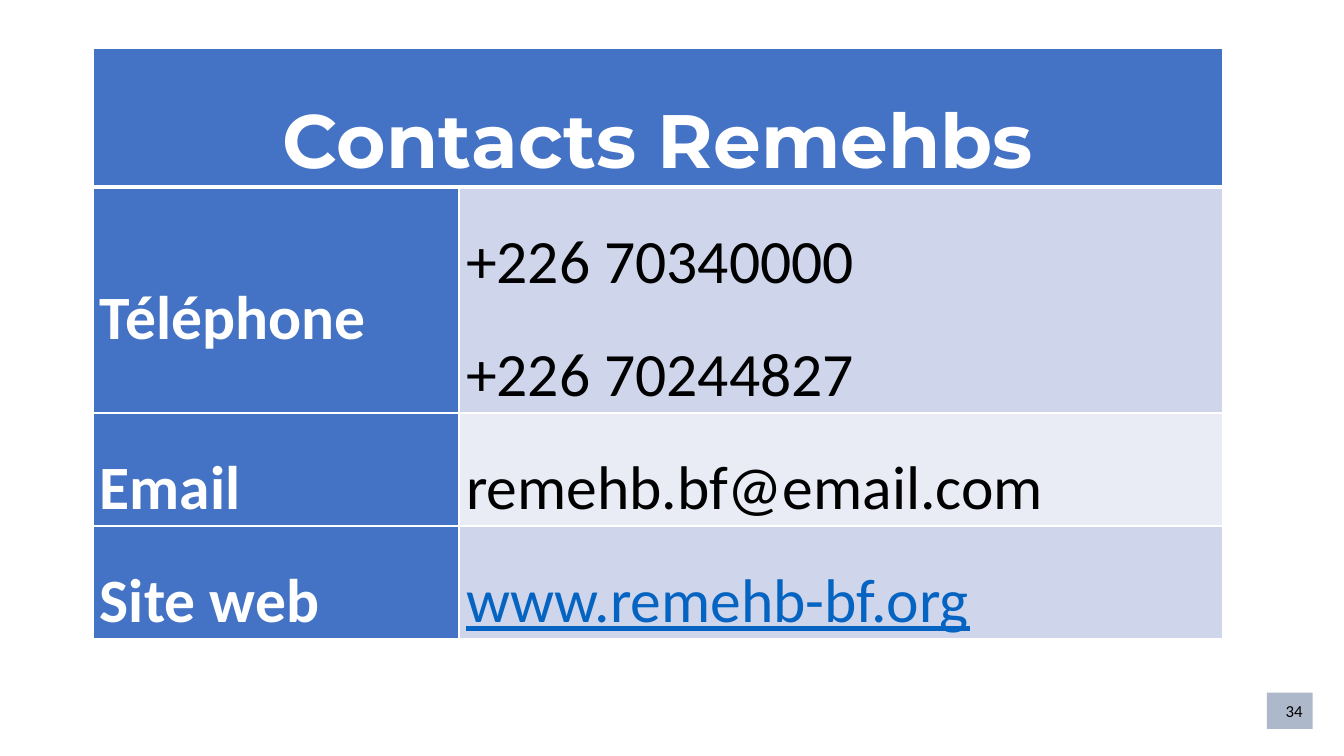
from lxml import etree
from pptx import Presentation
from pptx.dml.color import RGBColor
from pptx.enum.shapes import MSO_SHAPE
from pptx.enum.text import MSO_ANCHOR, PP_ALIGN
from pptx.oxml.ns import qn
from pptx.util import Pt

RECT = MSO_SHAPE.RECTANGLE
MIDDLE = MSO_ANCHOR.MIDDLE
CENTER, RIGHT, JUSTIFY = PP_ALIGN.CENTER, PP_ALIGN.RIGHT, PP_ALIGN.JUSTIFY

COLORS = {
    "white": "FFFFFF", "black": "000000", "blue": "4472C4", "link": "0563C1",
    "dark": "CFD5EA", "light": "E9EBF5", "grey": "ADB9CA",
}

# Label, value, value fill, value colour, row height
ROWS = [
    ("Téléphone", "+226 70340000\n+226 70244827", "dark", "black", 161),
    ("Email", "remehb.bf@email.com", "light", "black", 80.5),
    ("Site web", "www.remehb-bf.org", "dark", "link", 80.5),
]
HEAD = 98.5


def rgb(name):
    return RGBColor.from_string(COLORS[name])


def style(frame, align, font, size, color, bold=False, space=None):
    for para in frame.paragraphs:
        para.alignment = align
        para.line_spacing = space
        for run in para.runs:
            run.font.name = font
            run.font.size = Pt(size)
            run.font.bold = bold
            run.font.underline = True if color == "link" else None
            run.font.color.rgb = rgb(color)


def border(cell, top, bottom):
    props = cell._tc.get_or_add_tcPr()
    for side, width in (("L", 1), ("R", 1), ("T", top), ("B", bottom)):
        line = etree.SubElement(props, qn("a:ln" + side), w=str(Pt(width)))
        fill = etree.SubElement(line, qn("a:solidFill"))
        etree.SubElement(fill, qn("a:srgbClr"), val=COLORS["white"])


def fill_cell(cell, text, fill, align, font, size, color, bold):
    cell.text_frame.text = text
    cell.vertical_anchor = MIDDLE
    cell.margin_left = cell.margin_right = Pt(5)
    cell.margin_top = cell.margin_bottom = 0
    cell.fill.solid()
    cell.fill.fore_color.rgb = rgb(fill)
    style(cell.text_frame, align, font, size, color, bold, 1.5)


def add_contacts(slide, left, top, width, height):
    frame = slide.shapes.add_table(len(ROWS) + 1, 2, Pt(left), Pt(top),
                                   Pt(width), Pt(height))
    table = frame.table
    label = 261.5
    table.columns[0].width = Pt(label)
    table.columns[1].width = Pt(width - label)

    # Borders, with a thicker rule below the header
    for i in range(len(ROWS) + 1):
        for cell in table.rows[i].cells:
            border(cell, 3 if i == 1 else 1, 3 if i == 0 else 1)

    # Header
    table.rows[0].height = Pt(HEAD)
    head = table.cell(0, 0)
    head.merge(table.cell(0, 1))
    fill_cell(head, "Contacts Remehbs", "blue", CENTER,
              "Montserrat", 54, "white", True)

    # Contact rows
    for i, (name, value, fill, color, tall) in enumerate(ROWS, 1):
        table.rows[i].height = Pt(tall)
        fill_cell(table.cell(i, 0), name, "blue", JUSTIFY,
                  "Calibri", 44, "white", True)
        fill_cell(table.cell(i, 1), value, fill, JUSTIFY,
                  "Calibri", 44, color, False)


def add_number(slide, left, top, width, height):
    box = slide.shapes.add_shape(RECT, Pt(left), Pt(top), Pt(width), Pt(height))
    box.shadow.inherit = False
    box.fill.solid()
    box.fill.fore_color.rgb = rgb("grey")
    box.line.fill.background()
    box.text_frame.text = "34"
    box.text_frame.vertical_anchor = MIDDLE
    style(box.text_frame, RIGHT, "Calibri", 12, "black")


def main():
    deck = Presentation()
    deck.slide_width, deck.slide_height = Pt(960), Pt(540)
    slide = deck.slides.add_slide(deck.slide_layouts[6])
    add_number(slide, 905, 494.7, 32.6, 26)
    add_contacts(slide, 66.4, 34.9, 807, HEAD + sum(row[-1] for row in ROWS))
    deck.save("out.pptx")


if __name__ == "__main__":
    main()
